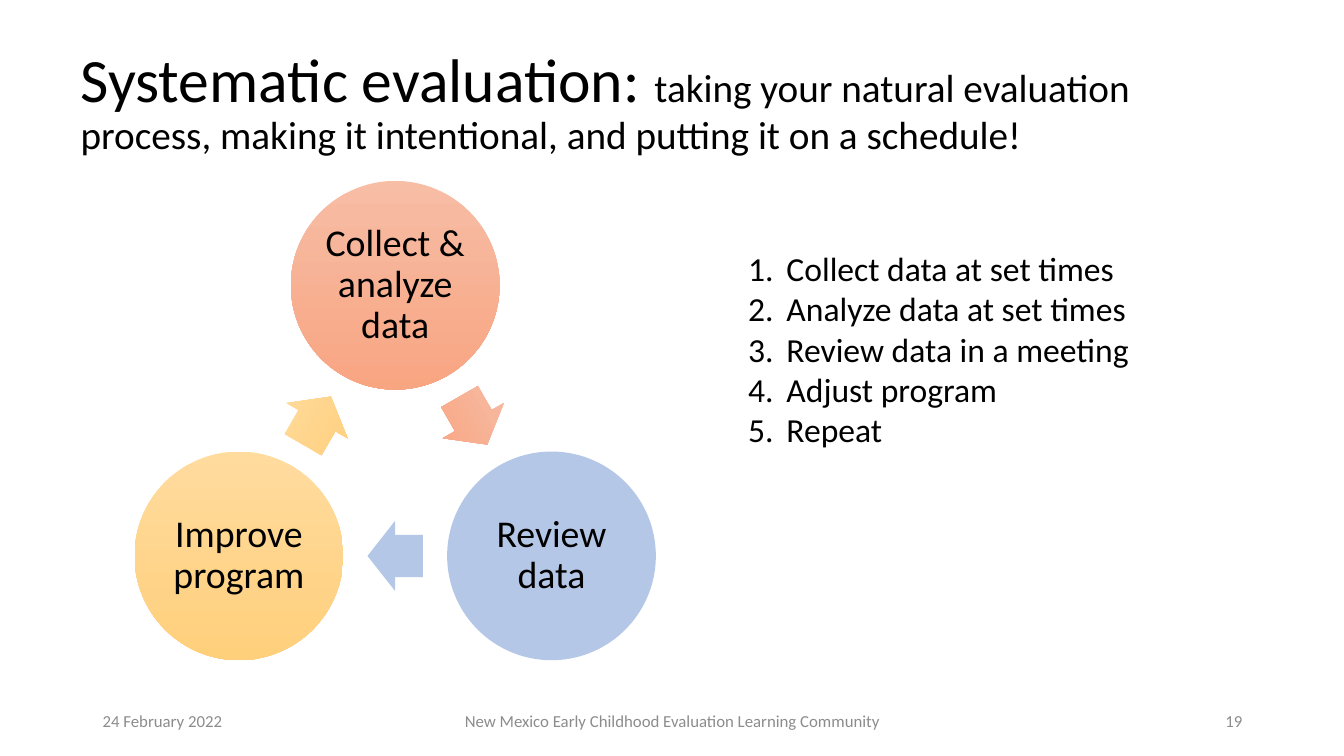
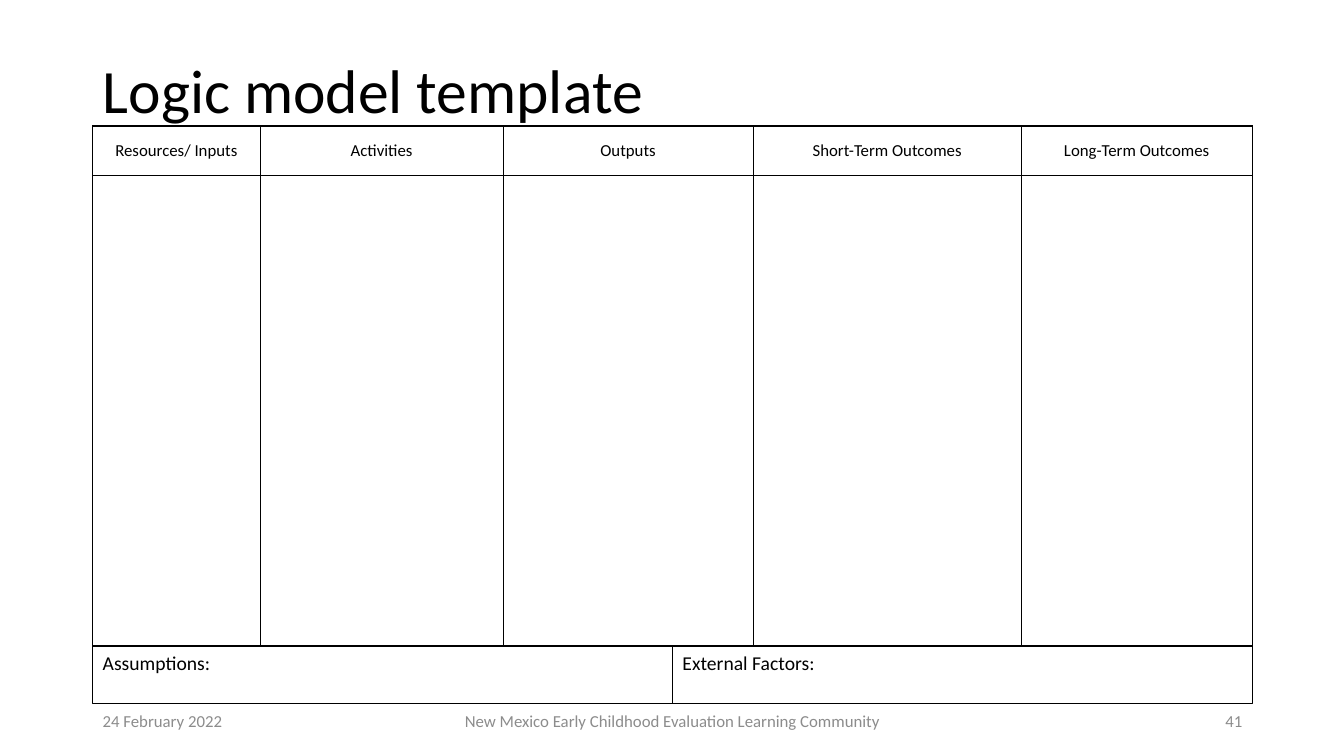
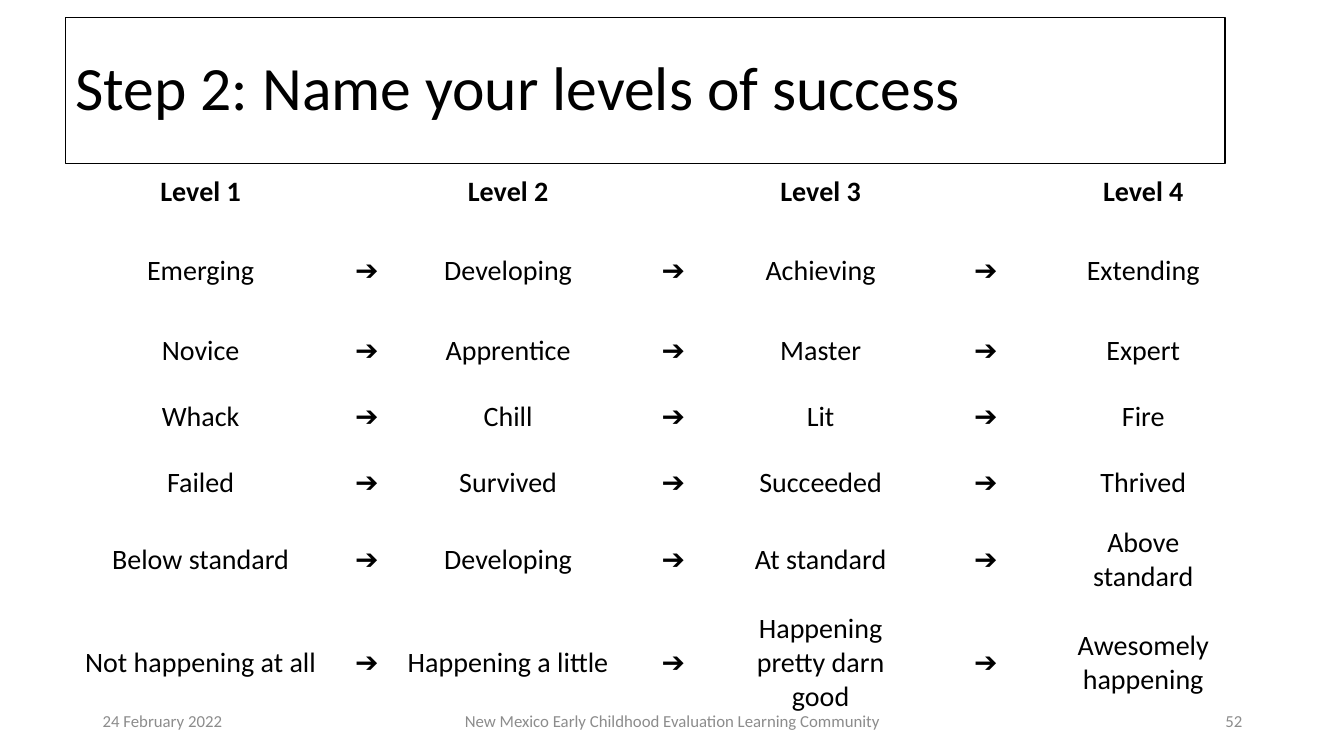
"""Build three evaluation workshop slides: a cycle, a logic model and success levels."""
from dataclasses import dataclass
from math import cos, radians, sin
from typing import Any, NamedTuple, Optional

from lxml.etree import SubElement
from pptx import Presentation
from pptx.dml.color import RGBColor
from pptx.enum.shapes import MSO_SHAPE as Shape
from pptx.enum.text import MSO_ANCHOR as Anchor, MSO_AUTO_SIZE as AutoSize, PP_ALIGN as Align
from pptx.oxml import parse_xml
from pptx.oxml.ns import nsdecls, qn
from pptx.util import Pt

EMU_PER_PX = 9144
FONT = "Calibri"
BLACK = RGBColor(0x00, 0x00, 0x00)
GRAY = RGBColor(0x8C, 0x8C, 0x8C)
CORAL_LIGHT = RGBColor(0xF7, 0xBD, 0xA5)
CORAL = RGBColor(0xF8, 0xA5, 0x82)
BLUE = RGBColor(0xB4, 0xC7, 0xE7)
GOLD_LIGHT = RGBColor(0xFF, 0xDB, 0x9E)
GOLD = RGBColor(0xFF, 0xD0, 0x7C)
TITLE_LAYOUT, LIST_LAYOUT = 5, 1
ARROW = "➔"


class Box(NamedTuple):
    left: int
    top: int
    width: int
    height: int


class Span(NamedTuple):
    text: str
    size: int
    color: RGBColor = BLACK
    bold: bool = False


@dataclass(frozen=True)
class Stage:
    label: str
    angle: int
    light: RGBColor
    dark: RGBColor


@dataclass(frozen=True)
class Footer:
    text: str
    box: Box
    align: Align


STAGES = (
    Stage("Collect & analyze data", -90, CORAL_LIGHT, CORAL),
    Stage("Review data", 30, BLUE, BLUE),
    Stage("Improve program", 150, GOLD_LIGHT, GOLD),
)
STEPS = (
    "Collect data at set times",
    "Analyze data at set times",
    "Review data in a meeting",
    "Adjust program",
    "Repeat",
)
LOGIC_HEADERS = ("Resources/ Inputs", "Activities", "Outputs", "Short-Term Outcomes", "Long-Term Outcomes")
LEVELS = (
    ("Emerging", "Developing", "Achieving", "Extending"),
    ("Novice", "Apprentice", "Master", "Expert"),
    ("Whack", "Chill", "Lit", "Fire"),
    ("Failed", "Survived", "Succeeded", "Thrived"),
    ("Below standard", "Developing", "At standard", "Above standard"),
    ("Not happening at all", "Happening a little", "Happening pretty darn good", "Awesomely happening"),
)


def px(length: float) -> int:
    """Turn pixels into EMU."""
    return round(length * EMU_PER_PX)


def apply(target: Any, formats: dict[str, Any]) -> None:
    """Set every named attribute on the target."""
    for name, value in formats.items():
        setattr(target, name, value)


def place(shape: Any, box: Box) -> None:
    """Move and size a shape."""
    apply(shape, {name: px(value) for name, value in box._asdict().items()})


def write(paragraph: Any, spans: tuple[Span, ...], align: Align, spacing: float = 1.0) -> None:
    """Fill a paragraph with formatted runs."""
    apply(paragraph, {"alignment": align, "line_spacing": spacing, "space_before": Pt(0), "space_after": Pt(0)})
    for span in spans:
        run = paragraph.add_run()
        run.text = span.text
        apply(run.font, {"name": FONT, "size": Pt(span.size), "bold": span.bold})
        run.font.color.rgb = span.color


def prepare(frame: Any, anchor: Anchor) -> None:
    """Wrap the text, keep its size and anchor it."""
    apply(frame, {"word_wrap": True, "auto_size": AutoSize.NONE, "vertical_anchor": anchor})


def outline(shape: Any) -> None:
    """Leave a shape unfilled with a thin black line."""
    shape.fill.background()
    shape.line.color.rgb = BLACK
    shape.line.width = Pt(0.75)


def add_page(deck: Any, layout: int, box: Box, title: tuple[Span, ...], number: int) -> Any:
    """Add a slide with its title and footers."""
    page = deck.slides.add_slide(deck.slide_layouts[layout])
    heading = page.shapes.title
    place(heading, box)
    prepare(heading.text_frame, Anchor.MIDDLE)
    write(heading.text_frame.paragraphs[0], title, Align.LEFT, 0.9)
    footers = (
        Footer("24 February 2022", Box(92, 695, 300, 40), Align.LEFT),
        Footer("New Mexico Early Childhood Evaluation Learning Community", Box(442, 695, 450, 40), Align.CENTER),
        Footer(str(number), Box(942, 695, 300, 40), Align.RIGHT),
    )
    for footer in footers:
        note = page.shapes.add_textbox(*map(px, footer.box))
        prepare(note.text_frame, Anchor.MIDDLE)
        write(note.text_frame.paragraphs[0], (Span(footer.text, 12, GRAY),), footer.align)
    return page


def add_stage_shape(page: Any, kind: Shape, angle: int, radius: float, size: tuple[int, int], stage: Stage) -> Any:
    """Add a shape of the cycle, centred at an angle on its ring."""
    width, height = size
    x = 392 + radius * cos(radians(angle))
    y = 462 + radius * sin(radians(angle))
    shape = page.shapes.add_shape(kind, px(x - width / 2), px(y - height / 2), px(width), px(height))
    shape.shadow.inherit = False
    shape.line.fill.background()
    if stage.light == stage.dark:
        shape.fill.solid()
        shape.fill.fore_color.rgb = stage.dark
    else:
        shape.fill.gradient()
        shape.fill.gradient_angle = 270
        for stop, color in zip(shape.fill.gradient_stops, (stage.light, stage.dark)):
            apply(stop.color, {"rgb": color})
        for stop, position in zip(shape.fill.gradient_stops, (0, 1)):
            stop.position = position
    return shape


def add_cycle(page: Any) -> None:
    """Draw the three stages and the arrows between them."""
    ring = 179
    for stage in STAGES:
        circle = add_stage_shape(page, Shape.OVAL, stage.angle, ring, (207, 207), stage)
        frame = circle.text_frame
        prepare(frame, Anchor.MIDDLE)
        apply(frame, {f"margin_{side}": px(4) for side in ("left", "right", "top", "bottom")})
        write(frame.paragraphs[0], (Span(stage.label, 27),), Align.CENTER, 0.9)
        arrow = add_stage_shape(page, Shape.RIGHT_ARROW, stage.angle + 60, ring / 2, (55, 70), stage)
        arrow.adjustments[0] = 0.6
        arrow.rotation = stage.angle + 150


def add_steps(page: Any) -> None:
    """Fill the body placeholder with the numbered steps."""
    body = page.placeholders[1]
    place(body, Box(732, 241, 445, 212))
    frame = body.text_frame
    prepare(frame, Anchor.TOP)
    for index, step in enumerate(STEPS):
        paragraph = frame.add_paragraph() if index else frame.paragraphs[0]
        properties = paragraph._p.get_or_add_pPr()
        properties.set("marL", str(px(38)))
        properties.set("indent", str(-px(38)))
        SubElement(properties, qn("a:buFont"), typeface="+mj-lt")
        SubElement(properties, qn("a:buAutoNum"), type="arabicPeriod")
        write(paragraph, (Span(step, 24),), Align.LEFT)


def add_grid(page: Any, left: int, top: int, columns: tuple[int, ...], rows: tuple[int, ...], margin: int) -> Any:
    """Add a plain table with clear cells."""
    frame = page.shapes.add_table(
        len(rows), len(columns), px(left), px(top), px(sum(columns)), px(sum(rows))
    )
    table = frame.table
    apply(table, {"first_row": False, "horz_banding": False})
    for column, width in zip(table.columns, columns):
        column.width = px(width)
    for row, height in zip(table.rows, rows):
        row.height = px(height)
    for cell in table.iter_cells():
        cell.fill.background()
        apply(cell, {"margin_left": px(margin), "margin_right": px(margin), "margin_top": 0, "margin_bottom": 0})
    return table


def set_borders(cell: Any, color: Optional[RGBColor]) -> None:
    """Draw all four cell borders, or none without a colour."""
    fill = f'<a:solidFill><a:srgbClr val="{color}"/></a:solidFill>' if color is not None else "<a:noFill/>"
    for index, side in enumerate("LRTB"):
        border = parse_xml(f'<a:ln{side} {nsdecls("a")} w="{Pt(1)}">{fill}</a:ln{side}>')
        cell._tc.get_or_add_tcPr().insert(index, border)


def fill_cell(cell: Any, span: Span, anchor: Anchor) -> None:
    """Write centred text in a table cell."""
    cell.vertical_anchor = anchor
    write(cell.text_frame.paragraphs[0], (span,), Align.CENTER)


def add_logic_model(page: Any) -> None:
    """Draw the empty logic model and the boxes under it."""
    table = add_grid(page, 92, 125, (166, 241, 248, 266, 229), (49, 467), 6)
    for cell in table.iter_cells():
        set_borders(cell, BLACK)
    for column, header in enumerate(LOGIC_HEADERS):
        fill_cell(table.cell(0, column), Span(header, 12), Anchor.MIDDLE)
    for index, label in enumerate(("Assumptions:", "External Factors:")):
        panel = page.shapes.add_shape(Shape.RECTANGLE, *map(px, Box(92 + 575 * index, 641, 575, 57)))
        panel.shadow.inherit = False
        outline(panel)
        prepare(panel.text_frame, Anchor.TOP)
        write(panel.text_frame.paragraphs[0], (Span(label, 14),), Align.LEFT)


def add_levels(page: Any) -> None:
    """Draw the level names with arrows between them."""
    table = add_grid(page, 66, 173, (266, 64, 216, 112, 180, 148, 164), (50, 92, 66, 66, 64, 89, 116), 7)
    for cell in table.iter_cells():
        set_borders(cell, None)
    for level in range(4):
        fill_cell(table.cell(0, 2 * level), Span(f"Level {level + 1}", 20, bold=True), Anchor.TOP)
    for row, names in enumerate(LEVELS, 1):
        for level, name in enumerate(names):
            fill_cell(table.cell(row, 2 * level), Span(name, 20), Anchor.MIDDLE)
            if level:
                fill_cell(table.cell(row, 2 * level - 1), Span(ARROW, 20), Anchor.MIDDLE)


def main() -> None:
    """Build and save the deck."""
    deck = Presentation()
    apply(deck, {"slide_width": px(1333), "slide_height": px(750)})
    cycle_title = (
        Span("Systematic evaluation: ", 44),
        Span("taking your natural evaluation process, making it intentional, and putting it on a schedule!", 28),
    )
    cycle = add_page(deck, LIST_LAYOUT, Box(70, 30, 1081, 145), cycle_title, 19)
    add_cycle(cycle)
    add_steps(cycle)
    logic = add_page(deck, TITLE_LAYOUT, Box(92, 40, 1150, 105), (Span("Logic model template", 44),), 41)
    add_logic_model(logic)
    success_title = (Span("Step 2: Name your levels of success", 44),)
    success = add_page(deck, TITLE_LAYOUT, Box(65, 17, 1150, 145), success_title, 52)
    outline(success.shapes.title)
    add_levels(success)
    deck.save("out.pptx")


if __name__ == "__main__":
    main()
